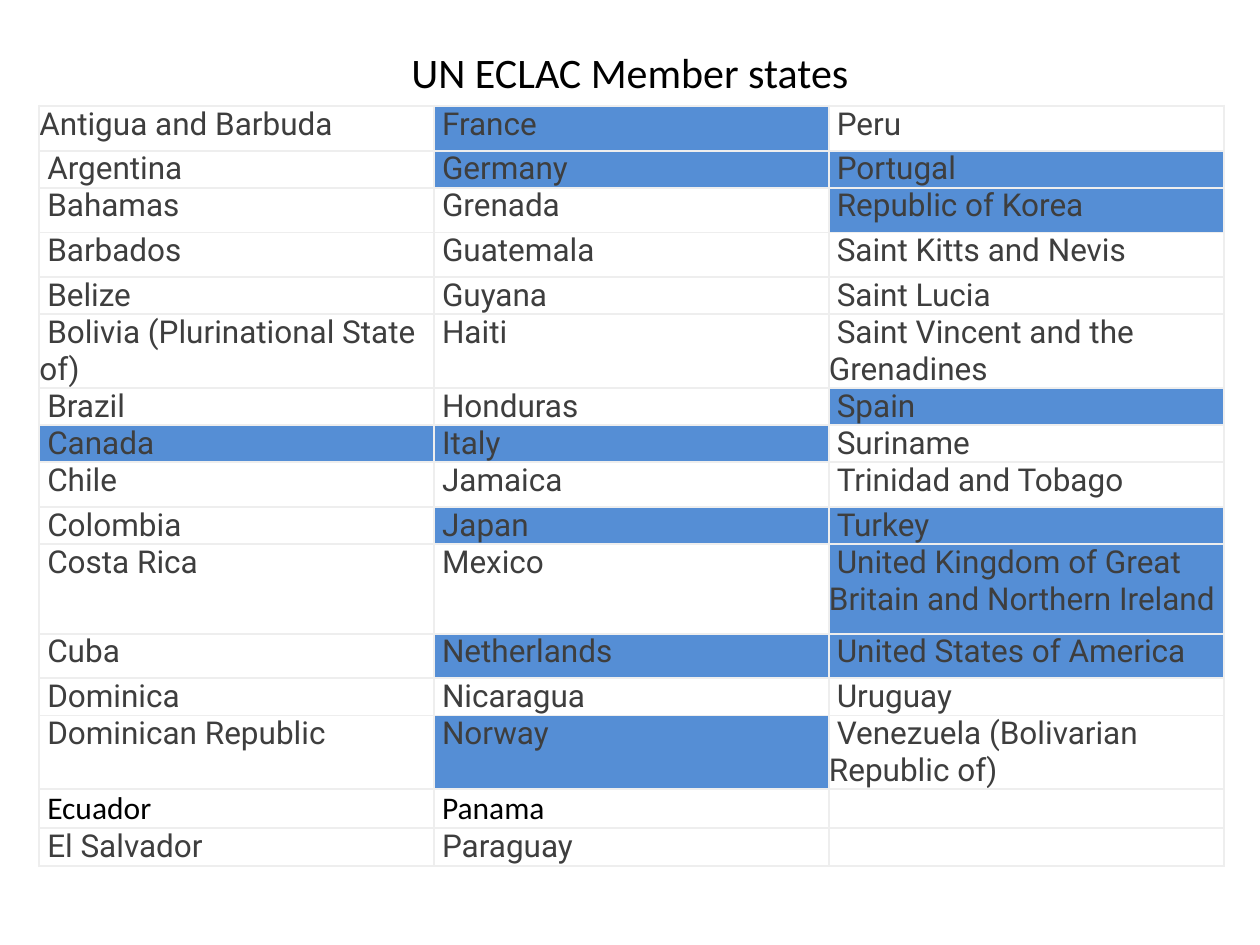
"""Build a slide with a table of the UN ECLAC member states."""
from dataclasses import dataclass

from lxml.etree import SubElement
from pptx import Presentation
from pptx.dml.color import RGBColor
from pptx.enum.text import MSO_ANCHOR, PP_ALIGN
from pptx.oxml.ns import qn
from pptx.util import Pt

BLACK = RGBColor(0x00, 0x00, 0x00)
GREY = RGBColor(0x3E, 0x3E, 0x3E)
BLUE = RGBColor(0x55, 0x8E, 0xD5)
PALE = RGBColor(0xEE, 0xEE, 0xEE)
UNIT = 12.8
WIDTH = 225.6
INDENT = 4.5


@dataclass(frozen=True)
class Row:
    units: int
    names: tuple[str, str, str]


ROWS = [
    Row(2, ("Antigua and Barbuda", "France", "Peru")),
    Row(1, ("Argentina", "Germany", "Portugal")),
    Row(2, ("Bahamas", "Grenada", "Republic of Korea")),
    Row(2, ("Barbados", "Guatemala", "Saint Kitts and Nevis")),
    Row(1, ("Belize", "Guyana", "Saint Lucia")),
    Row(3, ("Bolivia (Plurinational State of)", "Haiti", "Saint Vincent and the Grenadines")),
    Row(1, ("Brazil", "Honduras", "Spain")),
    Row(1, ("Canada", "Italy", "Suriname")),
    Row(2, ("Chile", "Jamaica", "Trinidad and Tobago")),
    Row(1, ("Colombia", "Japan", "Turkey")),
    Row(4, ("Costa Rica", "Mexico", "United Kingdom of Great Britain and Northern Ireland")),
    Row(2, ("Cuba", "Netherlands", "United States of America")),
    Row(1, ("Dominica", "Nicaragua", "Uruguay")),
    Row(3, ("Dominican Republic", "Norway", "Venezuela (Bolivarian Republic of)")),
    Row(1, ("Ecuador", "Panama", "")),
    Row(1, ("El Salvador", "Paraguay", "")),
]
FILLED = {
    "France", "Germany", "Portugal", "Republic of Korea", "Spain", "Canada", "Italy",
    "Japan", "Turkey", "United Kingdom of Great Britain and Northern Ireland",
    "Netherlands", "United States of America", "Norway",
}
PLAIN = {"Ecuador", "Panama"}
FLUSH = {"Antigua and Barbuda"}


def add_run(para, text: str, face: str, size: float, color: RGBColor) -> None:
    run = para.add_run()
    run.text = text
    run.font.name = face
    run.font.size = Pt(size)
    run.font.color.rgb = color


def add_lines(cell) -> None:
    props = cell._tc.get_or_add_tcPr()
    for side in ("a:lnL", "a:lnR", "a:lnT", "a:lnB"):
        line = SubElement(props, qn(side), w=str(Pt(1.2)))
        fill = SubElement(line, qn("a:solidFill"))
        SubElement(fill, qn("a:srgbClr"), val=str(PALE))


def fill_cell(cell, name: str) -> None:
    cell.margin_left = cell.margin_right = cell.margin_top = cell.margin_bottom = Pt(0)
    cell.vertical_anchor = MSO_ANCHOR.TOP
    add_lines(cell)
    if name in FILLED:
        cell.fill.solid()
        cell.fill.fore_color.rgb = BLUE
    else:
        cell.fill.background()
    if name:
        para = cell.text_frame.paragraphs[0]
        if name not in FLUSH:
            para._p.get_or_add_pPr().set("indent", str(Pt(INDENT)))
        face, color = ("Calibri", BLACK) if name in PLAIN else ("Roboto", GREY)
        add_run(para, name, face, 18, color)


def add_title(slide) -> None:
    title = slide.shapes.title
    title.left, title.top, title.width, title.height = Pt(36), Pt(21.6), Pt(648), Pt(38.9)
    title.text_frame.vertical_anchor = MSO_ANCHOR.MIDDLE
    para = title.text_frame.paragraphs[0]
    para.alignment = PP_ALIGN.CENTER
    add_run(para, "UN ECLAC Member states", "Calibri", 24, BLACK)


def add_states(slide) -> None:
    frame = slide.shapes.add_table(len(ROWS), 3, Pt(22.5), Pt(60.5), Pt(3 * WIDTH), Pt(446.4))
    table = frame.table
    table.first_row = table.horz_banding = False
    for col in table.columns:
        col.width = Pt(WIDTH)
    for line, row in zip(table.rows, ROWS):
        line.height = Pt(row.units * UNIT)
        for cell, name in zip(line.cells, row.names):
            fill_cell(cell, name)
    frame.height = Pt(446.4)


def main() -> None:
    deck = Presentation()
    deck.slide_width, deck.slide_height = Pt(720), Pt(540)
    slide = deck.slides.add_slide(deck.slide_layouts[5])
    add_title(slide)
    add_states(slide)
    deck.save("out.pptx")


if __name__ == "__main__":
    main()
